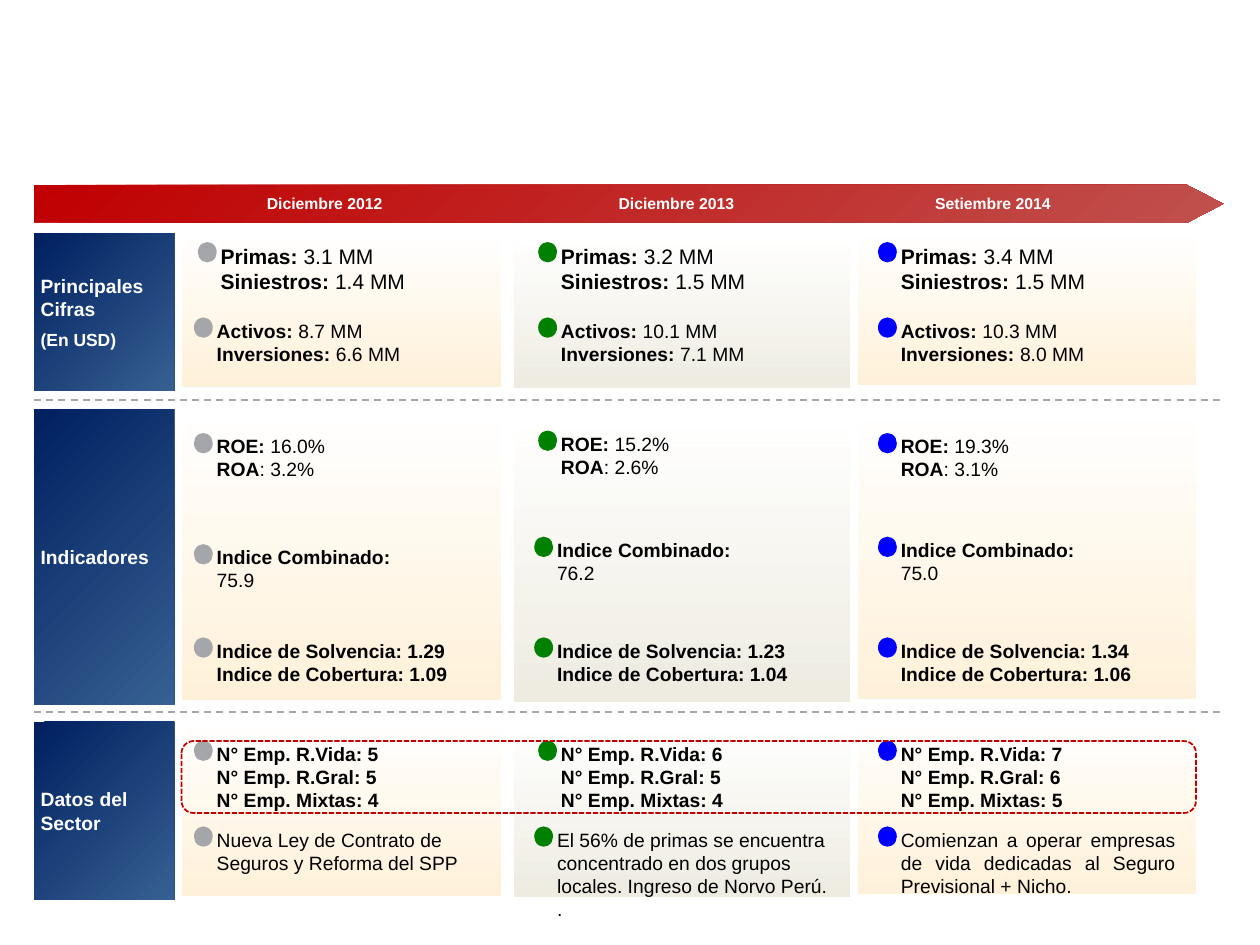
from dataclasses import dataclass, field
from itertools import zip_longest

from lxml.etree import SubElement
from pptx import Presentation
from pptx.dml.color import RGBColor
from pptx.enum.dml import MSO_LINE
from pptx.enum.shapes import MSO_CONNECTOR, MSO_SHAPE
from pptx.enum.text import MSO_ANCHOR, PP_ALIGN
from pptx.oxml.ns import qn
from pptx.util import Cm, Pt


@dataclass(frozen=True)
class Theme:
    font: str = "Arial"
    white: str = "FFFFFF"
    black: str = "000000"
    cream: str = "FFF1D9"
    stone: str = "EEECE1"
    navy: str = "002060"
    steel: str = "376092"
    red: str = "C00000"
    rose: str = "C0504D"
    grey: str = "A5A6A9"
    green: str = "008000"
    blue: str = "0000FF"
    lead: int = 12
    body: int = 11
    unit: int = 10
    date: int = 9


T = Theme()


@dataclass
class Band:
    top: float
    height: float
    label: list


@dataclass
class Metric:
    band: int
    y: float
    labels: tuple = ()
    size: int = T.body
    wide: bool = False
    bold_values: bool = False


@dataclass
class Column:
    date: str
    date_x: float
    left: float
    width: float
    nudge: float
    dot_x: float
    text_w: float
    tint: str
    dot: str
    values: list
    align: PP_ALIGN = PP_ALIGN.LEFT
    shifts: dict = field(default_factory=dict)


# Lengths in centimetres
LEFT, RIGHT = 0.69, 24.66
BANDS = [
    Band(4.65, 3.15, [("Principales Cifras", T.body), ("(En USD)", T.unit)]),
    Band(8.2, 5.92, [("Indicadores", T.body)]),
    Band(14.5, 3.56, [("Datos del Sector", T.body)]),
]
METRICS = [
    Metric(0, 0.23, ("Primas: ", "Siniestros: "), size=T.lead),
    Metric(0, 1.75, ("Activos: ", "Inversiones: ")),
    Metric(1, 0.53, ("ROE: ", "ROA")),
    Metric(1, 2.62, ("Indice Combinado:",)),
    Metric(1, 4.65, ("Indice de Solvencia: ", "Indice de Cobertura: "), wide=True, bold_values=True),
    Metric(2, 0.43, ("N° Emp. R.Vida: ", "N° Emp. R.Gral: ", "N° Emp. Mixtas: "), bold_values=True),
    Metric(2, 2.16, wide=True),
]
COLUMNS = [
    Column("Diciembre 2012", 1.72, 3.66, 6.45, 0, 0.25, 5.72, T.cream, T.grey,
           [("3.1 MM", "1.4 MM"), ("8.7 MM", "6.6 MM"), ("16.0%", ": 3.2%"), ("", "75.9"),
            ("1.29", "1.09"), ("5", "5", "4"),
            ("Nueva Ley de Contrato de Seguros y Reforma del SPP",)],
           shifts={0: (0.08, 0), 3: (0, 0.15)}),
    Column("Diciembre 2013", 2.11, 10.36, 6.78, 0.03, 0.41, 5.92, T.stone, T.green,
           [("3.2 MM", "1.5 MM"), ("10.1 MM", "7.1 MM"), ("15.2%", ": 2.6%"), ("", "76.2"),
            ("1.23", "1.04"), ("6", "5", "4"),
            ("El 56% de primas se encuentra concentrado en dos grupos locales. "
             "Ingreso de Norvo Perú.", ".")],
           shifts={0: (0.08, 0), 1: (0.08, 0), 2: (0.08, -0.05), 5: (0.08, 0)}),
    Column("Setiembre 2014", 1.55, 17.3, 6.81, -0.03, 0.4, 5.54, T.cream, T.blue,
           [("3.4 MM", "1.5 MM"), ("10.3 MM", "8.0 MM"), ("19.3%", ": 3.1%"), ("", "75.0"),
            ("1.34", "1.06"), ("7", "6", "5"),
            ("Comienzan a operar empresas de vida dedicadas al Seguro Previsional + Nicho.",)],
           align=PP_ALIGN.JUSTIFY),
]


def rgb(color):
    return RGBColor.from_string(color)


def add_box(s, kind, x, y, w, h, colors=(), angle=0):
    sp = s.shapes.add_shape(kind, Cm(x), Cm(y), Cm(w), Cm(h))
    sp.shadow.inherit = False
    sp.line.fill.background()
    if len(colors) == 2:
        sp.fill.gradient()
        sp.fill.gradient_angle = angle
        for stop, color in zip(sp.fill.gradient_stops, colors):
            stop.color.rgb = rgb(color)
    elif colors:
        sp.fill.solid()
        sp.fill.fore_color.rgb = rgb(colors[0])
    else:
        sp.fill.background()
    return sp


def add_run(p, text, size, color, bold):
    if text:
        r = p.add_run()
        r.text = text
        r.font.name, r.font.size, r.font.bold = T.font, Pt(size), bold
        r.font.color.rgb = rgb(color)


def set_frame(tf, inset=0):
    tf.word_wrap = True
    tf.margin_left = tf.margin_right = tf.margin_top = tf.margin_bottom = Cm(inset)


def add_text(s, x, y, w, h, lines, size, color, align=PP_ALIGN.LEFT):
    """Each line is a list of (text, bold) runs."""
    tf = s.shapes.add_textbox(Cm(x), Cm(y), Cm(w), Cm(h)).text_frame
    set_frame(tf)
    for i, line in enumerate(lines):
        p = tf.paragraphs[0] if i == 0 else tf.add_paragraph()
        p.alignment = align
        for text, bold in line:
            add_run(p, text, size, color, bold)


def add_timeline(s, x, y, w, h):
    sp = add_box(s, MSO_SHAPE.PENTAGON, x, y, w, h, (T.rose, T.red))
    sp.adjustments[0] = 0.96
    # Radial gradient centred on the bottom right corner
    grad = sp._element.spPr.find(qn("a:gradFill"))
    grad.remove(grad.find(qn("a:lin")))
    radial = SubElement(grad, qn("a:path"), {"path": "circle"})
    SubElement(radial, qn("a:fillToRect"), {"l": "100000", "t": "100000"})
    for col in COLUMNS:
        add_text(s, col.left + col.date_x, y + 0.18, 3.15, 0.38,
                 [[(col.date, True)]], T.date, T.white)


def add_band_label(s, x, y, w, h, label):
    sp = add_box(s, MSO_SHAPE.RECTANGLE, x, y, w, h, (T.navy, T.steel), 315)
    tf = sp.text_frame
    set_frame(tf, 0.13)
    tf.vertical_anchor = MSO_ANCHOR.MIDDLE
    for i, (text, size) in enumerate(label):
        p = tf.paragraphs[0] if i == 0 else tf.add_paragraph()
        p.alignment = PP_ALIGN.LEFT
        p.space_after = Pt(2.75)
        if i:
            p.space_before = Pt(2.5)
        add_run(p, text, size, T.white, True)


def add_divider(s, x1, x2, y):
    line = s.shapes.add_connector(MSO_CONNECTOR.STRAIGHT, Cm(x1), Cm(y), Cm(x2), Cm(y))
    line.line.color.rgb = rgb(T.grey)
    line.line.width = Pt(1)
    line.line.dash_style = MSO_LINE.DASH
    SubElement(line._element.spPr, qn("a:effectLst"))


def add_column(s, col):
    # Cards
    for band in BANDS:
        add_box(s, MSO_SHAPE.RECTANGLE, col.left, band.top + col.nudge,
                col.width, band.height, (T.white, col.tint), 270)
    # Dots and their texts
    for i, (metric, values) in enumerate(zip(METRICS, col.values)):
        dx, dy = col.shifts.get(i, (0, 0))
        x = col.left + col.dot_x + dx
        y = BANDS[metric.band].top + metric.y + dy
        lines = [[(label, True), (value, metric.bold_values)]
                 for label, value in zip_longest(metric.labels, values, fillvalue="")]
        add_box(s, MSO_SHAPE.OVAL, x, y, 0.38, 0.41, (col.dot,))
        add_text(s, x + 0.46, y + 0.03, col.text_w if metric.wide else 4.01,
                 len(lines) * metric.size * 0.04, lines, metric.size, T.black,
                 PP_ALIGN.LEFT if metric.labels else col.align)


def add_highlight(s, x, y, w, h):
    sp = add_box(s, MSO_SHAPE.ROUNDED_RECTANGLE, x, y, w, h)
    sp.line.color.rgb = rgb(T.red)
    sp.line.width = Pt(1)
    sp.line.dash_style = MSO_LINE.SQUARE_DOT


def main():
    prs = Presentation()
    prs.slide_width, prs.slide_height = Cm(25.4), Cm(19.05)
    s = prs.slides.add_slide(prs.slide_layouts[6])

    add_timeline(s, LEFT, 3.73, RIGHT - LEFT, 0.76)
    for band in BANDS:
        add_band_label(s, LEFT, band.top + 0.05, 2.82, band.height + 0.03, band.label)
    for band in BANDS[1:]:
        add_divider(s, LEFT, RIGHT, band.top - 0.14)
    for col in COLUMNS:
        add_column(s, col)

    # Frame around the company counts
    first, last = COLUMNS[0], COLUMNS[-1]
    add_highlight(s, first.left, BANDS[2].top + 0.44,
                  last.left + last.width - first.left, 1.45)
    prs.save("out.pptx")


if __name__ == "__main__":
    main()
